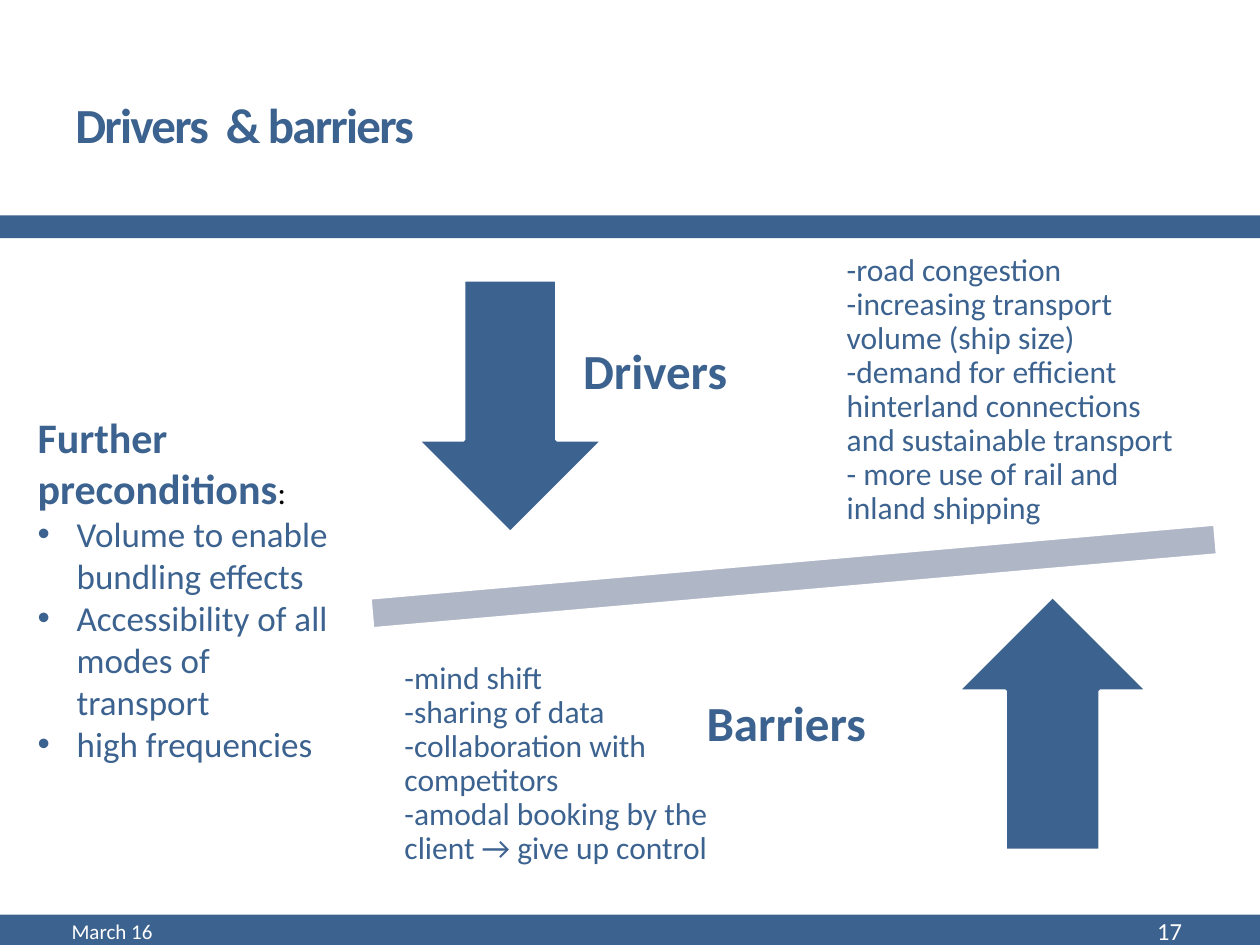
from lxml import etree
from pptx import Presentation
from pptx.dml.color import RGBColor
from pptx.enum.shapes import MSO_SHAPE
from pptx.enum.text import MSO_ANCHOR, PP_ALIGN
from pptx.oxml.ns import qn
from pptx.util import Inches, Pt

RECT, MINUS = MSO_SHAPE.RECTANGLE, MSO_SHAPE.MATH_MINUS
DOWN, UP = MSO_SHAPE.DOWN_ARROW, MSO_SHAPE.UP_ARROW
TOP, MIDDLE = MSO_ANCHOR.TOP, MSO_ANCHOR.MIDDLE
LEFT, RIGHT = PP_ALIGN.LEFT, PP_ALIGN.RIGHT

FONT = "Calibri"
COLORS = {"blue": "3C628F", "grey": "AFB7C6", "white": "FFFFFF", "black": "000000"}

DRIVERS = [
    "-road congestion",
    "-increasing transport volume (ship size)",
    "-demand for efficient hinterland connections and sustainable transport",
    "- more use of rail and inland shipping",
]
BARRIERS = [
    "-mind shift",
    "-sharing of data",
    "-collaboration with competitors",
    "-amodal booking by the client → give up control",
]
PRECONDITIONS = [
    "Volume to enable bundling effects",
    "Accessibility of all modes of transport",
    "high frequencies",
]


def rgb(name):
    return RGBColor.from_string(COLORS[name])


def add_shape(s, kind, box, color, outlined=False):
    sp = s.shapes.add_shape(kind, *map(Inches, box))
    sp.shadow.inherit = False
    sp.fill.solid()
    sp.fill.fore_color.rgb = rgb(color)
    if outlined:
        sp.line.color.rgb = rgb("white")
        sp.line.width = Pt(2.08)
    else:
        sp.line.fill.background()
    return sp


def add_frame(s, box, anchor=TOP):
    tf = s.shapes.add_textbox(*map(Inches, box)).text_frame
    tf.word_wrap = True
    tf.vertical_anchor = anchor
    return tf


def add_run(p, text, size, color="blue", bold=False):
    r = p.add_run()
    r.text = text
    r.font.name = FONT
    r.font.size = Pt(size)
    r.font.bold = bold
    r.font.color.rgb = rgb(color)
    return r


def add_label(s, box, text, size, color="blue", bold=False, anchor=TOP, align=LEFT):
    p = add_frame(s, box, anchor).paragraphs[0]
    p.alignment = align
    return add_run(p, text, size, color, bold)


def add_bullet(p, indent):
    pPr = p._p.get_or_add_pPr()
    pPr.set("marL", str(Inches(indent)))
    pPr.set("indent", str(-Inches(indent)))
    etree.SubElement(pPr, qn("a:buFont")).set("typeface", "Arial")
    etree.SubElement(pPr, qn("a:buChar")).set("char", "•")


def add_header(s, box):
    x, y, w, h = box
    add_shape(s, RECT, (x, y + h - 0.18, w, 0.18), "blue")
    r = add_label(s, (x + 0.5, y + 0.44, 5.21, 1.08), "Drivers  & barriers", 28,
                  bold=True, anchor=MIDDLE)
    r._r.get_or_add_rPr().set("spc", "-100")


def add_footer(s, box):
    x, y, w, h = box
    add_shape(s, RECT, box, "blue")
    add_label(s, (x + 0.47, y - 0.05, 3.17, 0.36), "March 16", 12, "white", anchor=MIDDLE)
    add_label(s, (x + w - 1.69, y - 0.05, 1.17, 0.36), "17", 14, "white",
              anchor=MIDDLE, align=RIGHT)


def add_argument_list(s, box, lines):
    tf = add_frame(s, box, MIDDLE)
    tf.margin_left = tf.margin_right = tf.margin_top = tf.margin_bottom = Inches(0.14)
    p = tf.paragraphs[0]
    p.line_spacing = 0.9
    for i, line in enumerate(lines):
        if i:
            p.add_line_break()
        add_run(p, line, 18)


def add_balance(s, box):
    x, y, w, h = box
    # Tilted beam between the two forces
    beam = add_shape(s, MINUS, (x - 1.35, y + 2.03, 9.16, 1.05), "grey", True)
    beam.rotation = 355
    # Drivers push down, barriers push up
    add_shape(s, DOWN, (x + 0.24, y + 0.2, 1.48, 2.01), "blue", True)
    add_shape(s, UP, (x + 4.53, y + 2.71, 1.51, 2.02), "blue", True)
    add_argument_list(s, (x + w - 2.95, y, 2.95, 2.15), DRIVERS)
    add_argument_list(s, (x, y + h - 2.15, 2.95, 2.15), BARRIERS)
    add_label(s, (x + 1.46, y + 0.63, 1.97, 0.57), "Drivers", 28, bold=True)
    add_label(s, (x + 2.44, y + 3.43, 1.97, 0.57), "Barriers", 28, bold=True)


def add_preconditions(s, box):
    tf = add_frame(s, box)
    p = tf.paragraphs[0]
    add_run(p, "Further preconditions", 24, bold=True)
    add_run(p, ":", 18, "black")
    for text in PRECONDITIONS:
        p = tf.add_paragraph()
        add_bullet(p, 0.31)
        add_run(p, text, 20)


def main():
    prs = Presentation()
    prs.slide_width, prs.slide_height = Inches(10), Inches(7.5)
    s = prs.slides.add_slide(prs.slide_layouts[6])
    add_header(s, (0, 0, 10, 1.89))
    add_footer(s, (0, 7.26, 10, 0.24))
    add_balance(s, (3.07, 2.02, 6.46, 5.12))
    add_preconditions(s, (0.2, 3.22, 2.68, 3.53))
    prs.save("out.pptx")


if __name__ == "__main__":
    main()
